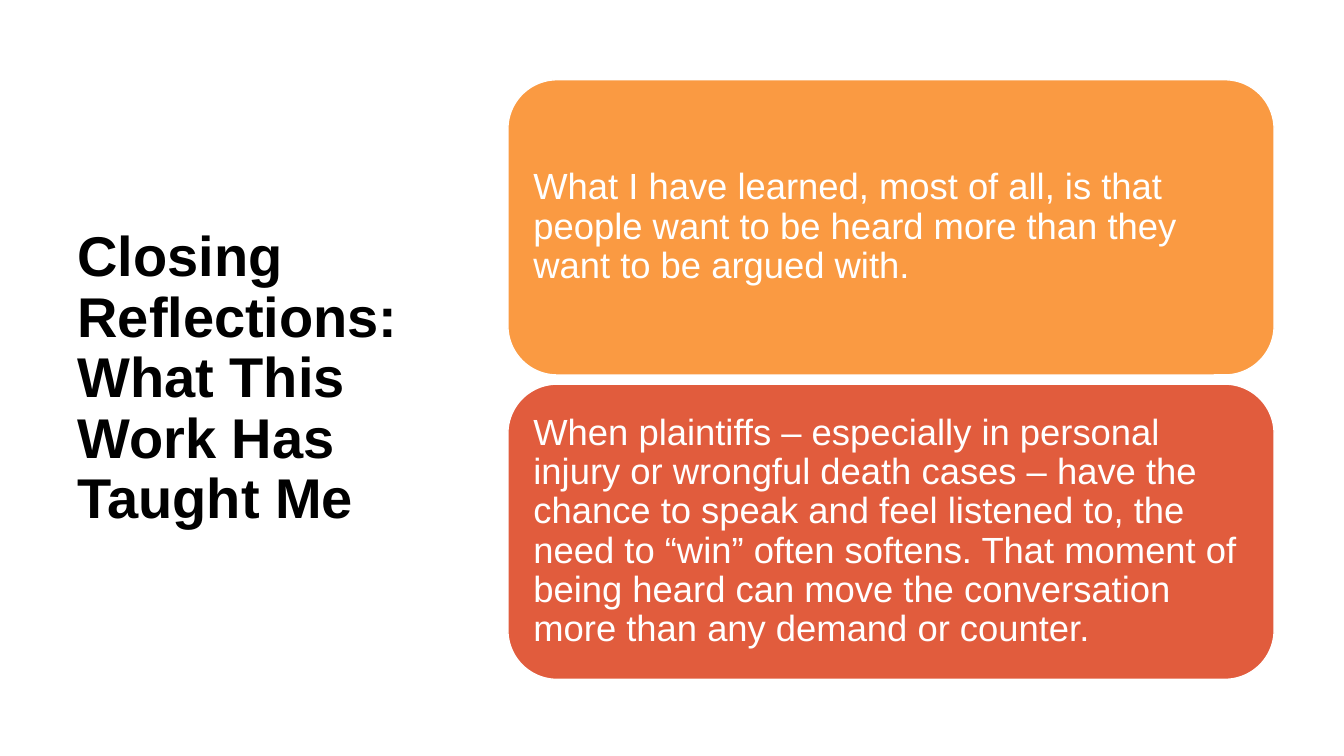
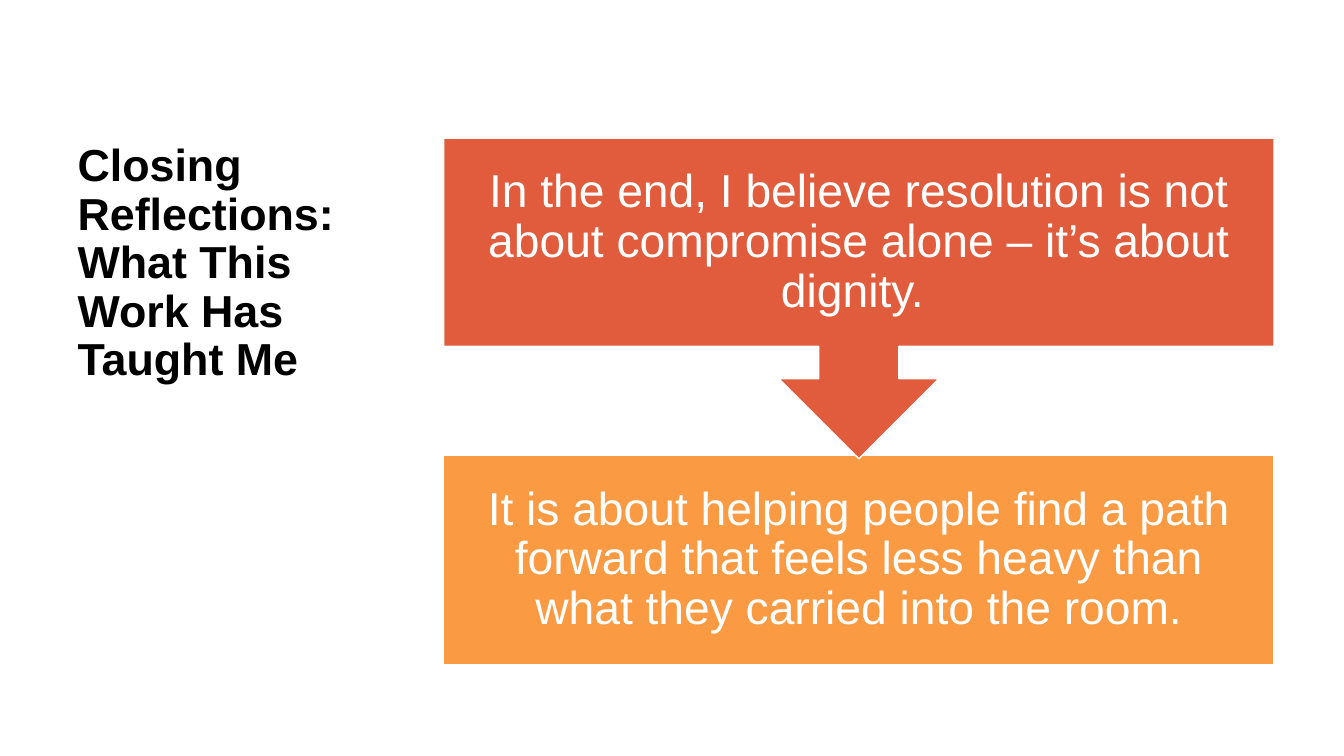
"""Build two closing-reflection slides: stacked cards and an arrow leading to a conclusion."""
from pptx import Presentation
from pptx.dml.color import RGBColor
from pptx.enum.shapes import MSO_SHAPE
from pptx.enum.text import MSO_ANCHOR, MSO_AUTO_SIZE, PP_ALIGN
from pptx.util import Cm, Pt

TITLE = "Closing Reflections: What This Work Has Taught Me"
LESSONS = [
    ("What I have learned, most of all, is that people want to be heard more than "
     "they want to be argued with.", "orange"),
    ("When plaintiffs – especially in personal injury or wrongful death cases – have "
     "the chance to speak and feel listened to, the need to “win” often softens. That "
     "moment of being heard can move the conversation more than any demand or counter.",
     "red"),
]
BELIEF = "In the end, I believe resolution is not about compromise alone – it’s about dignity. "
PURPOSE = ("It is about helping people find a path forward that feels less heavy than "
           "what they carried into the room.")

COLORS = {"orange": "FA9A42", "red": "E15C3D", "white": "FFFFFF", "black": "000000"}
FONT = "Arial"
RIGHT_EDGE = 32.11
TITLE_LEFT = 1.7


def color(name):
    return RGBColor.from_string(COLORS[name])


def write(frame, text, size, ink, align, anchor, bold=False):
    frame.text = text
    frame.word_wrap = True
    frame.auto_size = MSO_AUTO_SIZE.NONE
    frame.vertical_anchor = anchor
    paragraph = frame.paragraphs[0]
    paragraph.alignment = align
    paragraph.line_spacing = 0.9
    font = paragraph.runs[0].font
    font.name, font.size, font.bold = FONT, Pt(size), bold
    font.color.rgb = color(ink)


def add_titled_slide(prs, top, width, height, size, anchor):
    slide = prs.slides.add_slide(prs.slide_layouts[5])
    title = slide.shapes.title
    title.left, title.top = Cm(TITLE_LEFT), Cm(top)
    title.width, title.height = Cm(width), Cm(height)
    write(title.text_frame, TITLE, size, "black", PP_ALIGN.LEFT, anchor, bold=True)
    return slide


def add_panel(slide, preset, left, top, height, fill, text, size, align, inset):
    panel = slide.shapes.add_shape(
        preset, Cm(left), Cm(top), Cm(RIGHT_EDGE - left), Cm(height))
    panel.shadow.inherit = False
    panel.fill.solid()
    panel.fill.fore_color.rgb = color(fill)
    panel.line.color.rgb = color("white")
    panel.line.width = Pt(1)
    frame = panel.text_frame
    frame.margin_left = frame.margin_right = Cm(inset)
    frame.margin_top = frame.margin_bottom = Cm(inset)
    write(frame, text, size, "white", align, MSO_ANCHOR.MIDDLE)


def build_lessons(prs):
    slide = add_titled_slide(prs, 1.52, 9.7, 16.08, 40, MSO_ANCHOR.MIDDLE)
    card_top, card_height, gap = 2.01, 7.44, 0.23
    for row, (text, fill) in enumerate(LESSONS):
        add_panel(slide, MSO_SHAPE.ROUNDED_RECTANGLE, 12.8,
                  card_top + row * (card_height + gap), card_height,
                  fill, text, 26, PP_ALIGN.LEFT, 0.28)


def build_conclusion(prs):
    top, height, left = 3.48, 13.26, 11.18
    slide = add_titled_slide(prs, top, 8.08, height, 32, MSO_ANCHOR.TOP)
    purpose_height = 5.26
    steps = [
        (MSO_SHAPE.RECTANGLE, top + height - purpose_height, purpose_height,
         "orange", PURPOSE),
        (MSO_SHAPE.DOWN_ARROW_CALLOUT, top, 8.08, "red", BELIEF),
    ]
    for preset, step_top, step_height, fill, text in steps:
        add_panel(slide, preset, left, step_top, step_height,
                  fill, text, 33, PP_ALIGN.CENTER, 0.66)


def main():
    prs = Presentation()
    prs.slide_width, prs.slide_height = Cm(33.87), Cm(19.05)
    build_lessons(prs)
    build_conclusion(prs)
    prs.save("out.pptx")


if __name__ == "__main__":
    main()
